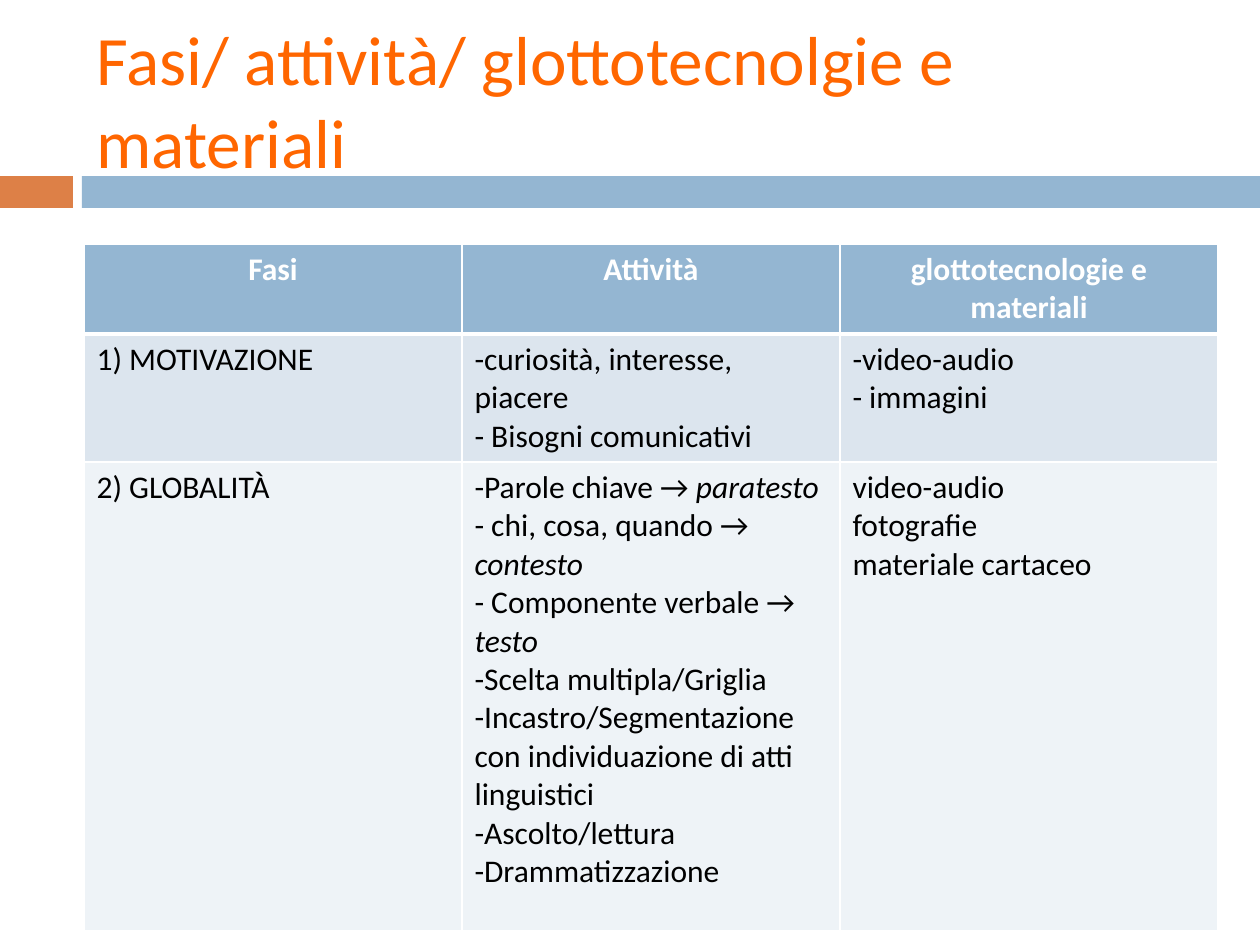
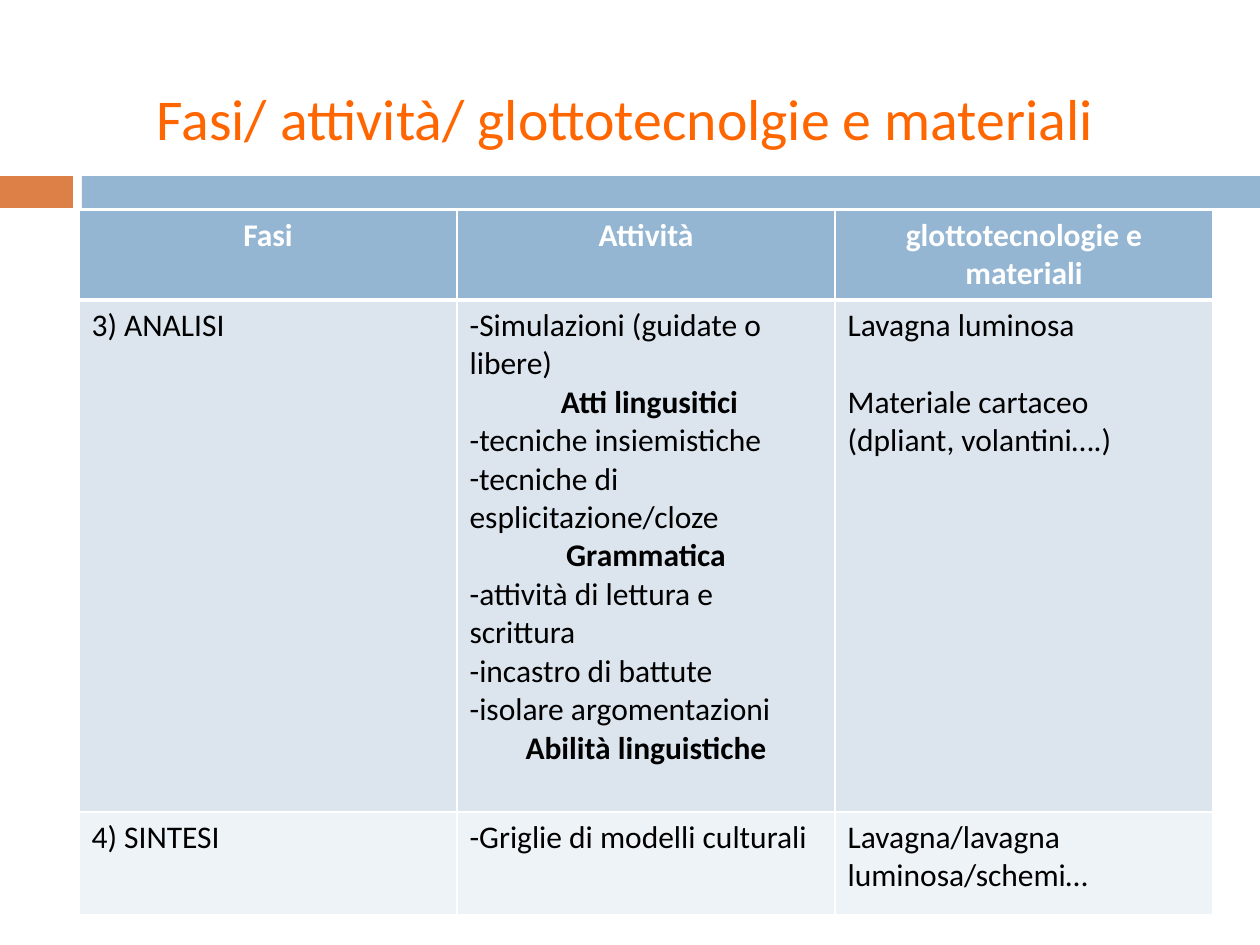
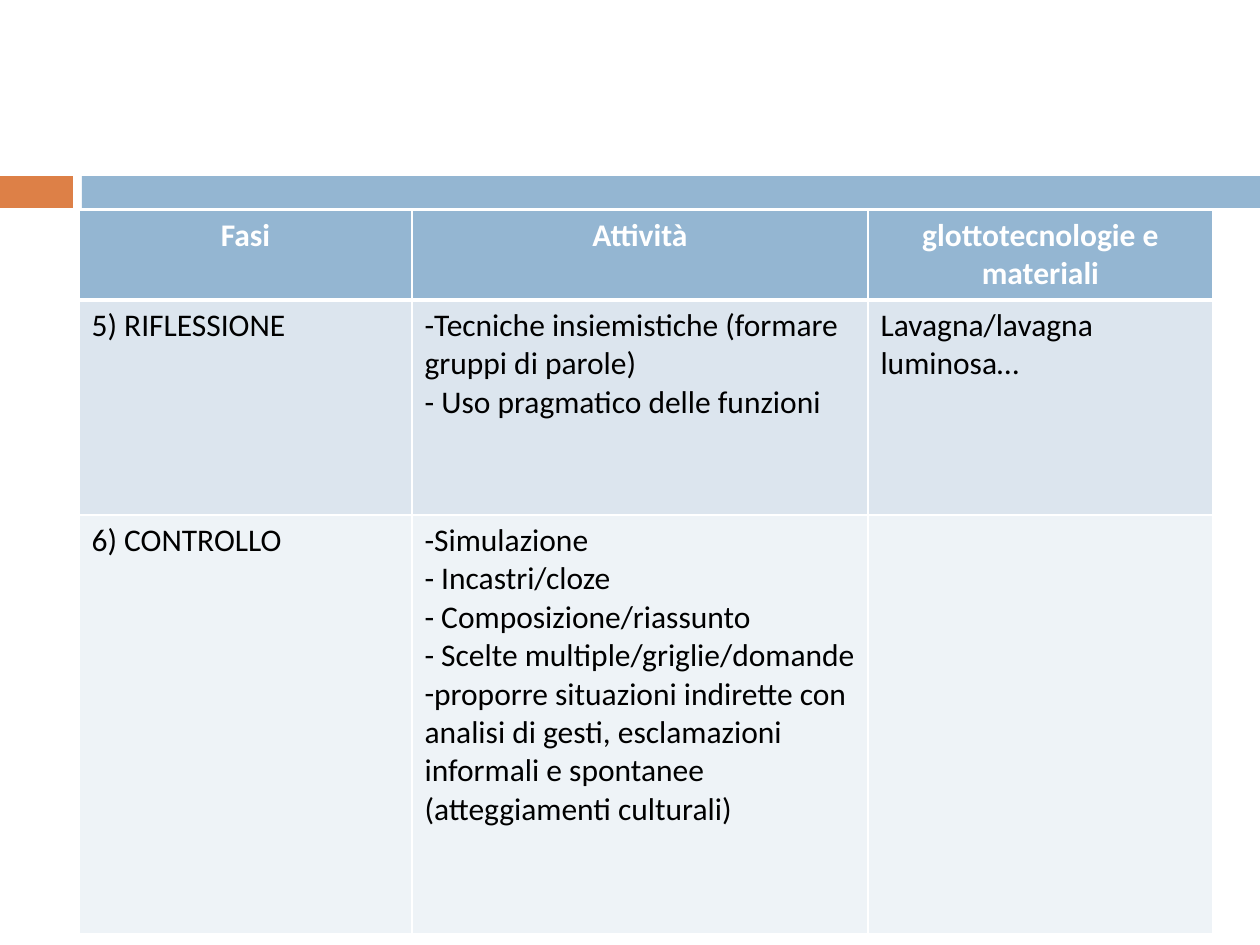
from dataclasses import dataclass
from pptx import Presentation
from pptx.dml.color import RGBColor as Rgb
from pptx.enum.shapes import MSO_SHAPE as Kind
from pptx.enum.text import MSO_ANCHOR as Anchor, PP_ALIGN as Align
from pptx.oxml import parse_xml
from pptx.oxml.ns import nsdecls
from pptx.util import Emu, Pt

SCALE = 914400 / 126


@dataclass(frozen=True)
class Theme:
    font: str = "Calibri"
    title: str = "FF6600"
    accent: str = "DD8047"
    band: str = "94B6D2"
    rows: tuple = ("DCE5EE", "EEF3F7")
    ink: str = "000000"
    white: str = "FFFFFF"
    big: float = 39.6
    mid: float = 33
    body: float = 18
    gap: float = 22
    thin: int = 1
    thick: int = 3


THEME = Theme()
HEADS = ("Fasi", "Attività", "glottotecnologie e materiali")
TITLE = "Fasi/ attività/ glottotecnolgie e materiali"


def px(*nums):
    return [Emu(round(n * SCALE)) for n in nums]


def line(text, slant="", **marks):
    return {"text": text, "slant": slant, **marks}


def dash(text, slant=""):
    return line(text, slant, dash=True)


def head(text):
    return line(text, bold=True, align=Align.CENTER)


def add_run(para, text, color, size, **marks):
    run = para.add_run()
    run.text = text
    run.font.color.rgb = Rgb.from_string(color)
    for name, value in {"name": THEME.font, "size": Pt(size), **marks}.items():
        setattr(run.font, name, value)


def add_dash(para):
    props = para._p.get_or_add_pPr()
    for name in ("marL", "indent"):
        props.set(name, "0")
    for tag, key, value in (("buFont", "typeface", THEME.font), ("buChar", "char", "-")):
        props.append(parse_xml(f'<a:{tag} {nsdecls("a")} {key}="{value}"/>'))


def fill_text(frame, lines, color):
    for num, item in enumerate(lines):
        para = frame.add_paragraph() if num else frame.paragraphs[0]
        para.alignment = item.get("align", Align.LEFT)
        if "before" in item:
            para.space_before = Pt(item["before"])
        if item.get("dash"):
            add_dash(para)
        bold = item.get("bold", False)
        add_run(para, item["text"], color, THEME.body, bold=bold)
        if item["slant"]:
            add_run(para, item["slant"], color, THEME.body, italic=True)


def add_edges(cell, top, base):
    props = cell._tc.get_or_add_tcPr()
    sides = {"L": THEME.thin, "R": THEME.thin, "T": top, "B": base}
    for side, width in sides.items():
        props.append(parse_xml(
            f'<a:ln{side} {nsdecls("a")} w="{Pt(width)}"><a:solidFill>'
            f'<a:srgbClr val="{THEME.white}"/></a:solidFill></a:ln{side}>'))


def add_bands(slide, box):
    left, top, width, height = box
    start = left + 82
    parts = ((left, 73, THEME.accent), (start, width - 82, THEME.band))
    for side, wide, color in parts:
        band = slide.shapes.add_shape(Kind.RECTANGLE, *px(side, top, wide, height))
        band.shadow.inherit = False
        band.fill.solid()
        band.fill.fore_color.rgb = Rgb.from_string(color)
        band.line.fill.background()


def add_title(slide, box, size, anchor, align):
    frame = slide.shapes.add_textbox(*px(*box)).text_frame
    frame.word_wrap = True
    frame.vertical_anchor = anchor
    para = frame.paragraphs[0]
    para.alignment = align
    add_run(para, TITLE, THEME.title, size)


def add_grid(slide, spot, cols, rows, body):
    box = (*spot, sum(cols), sum(rows))
    table = slide.shapes.add_table(len(rows), len(cols), *px(*box)).table
    table.horz_banding = False
    for col, width in zip(table.columns, px(*cols)):
        col.width = width
    for row, height in zip(table.rows, px(*rows)):
        row.height = height
    for r, items in enumerate([[[head(text)] for text in HEADS], *body]):
        top = THEME.thick if r == 1 else THEME.thin
        base = THEME.thin if r else THEME.thick
        shade = THEME.rows[(r - 1) % 2] if r else THEME.band
        for c, lines in enumerate(items):
            cell = table.cell(r, c)
            add_edges(cell, top, base)
            cell.fill.solid()
            cell.fill.fore_color.rgb = Rgb.from_string(shade)
            fill_text(cell.text_frame, lines, THEME.ink if r else THEME.white)


EVEN = (378, 378, 378)
FIRST = [
    [
        [line("1) MOTIVAZIONE")],
        [dash("curiosità, interesse, piacere"), dash(" Bisogni comunicativi")],
        [dash("video-audio"), dash(" immagini")],
    ],
    [
        [line("2) GLOBALITÀ")],
        [
            dash("Parole chiave → ", "paratesto"),
            dash(" chi, cosa, quando → ", "contesto"),
            dash(" Componente verbale → ", "testo"),
            dash("Scelta multipla/Griglia"),
            dash("Incastro/Segmentazione con individuazione di atti linguistici"),
            dash("Ascolto/lettura"),
            dash("Drammatizzazione"),
        ],
        [line("video-audio"), line("fotografie"), line("materiale cartaceo")],
    ],
]
NEXT = [
    [
        [line("3) ANALISI")],
        [
            line("-Simulazioni (guidate o libere)"),
            head(" Atti lingusitici"),
            line("-tecniche insiemistiche"),
            dash("tecniche di esplicitazione/cloze"),
            head("Grammatica"),
            line("-attività di lettura e scrittura"),
            line("-incastro di battute"),
            line("-isolare argomentazioni"),
            head("Abilità linguistiche"),
        ],
        [
            line("Lavagna luminosa"),
            line("Materiale cartaceo (dpliant, volantini….)", before=THEME.gap),
        ],
    ],
    [
        [line("4) SINTESI")],
        [dash("Griglie di modelli culturali")],
        [line("Lavagna/lavagna luminosa/schemi…")],
    ],
]
LAST = [
    [
        [line("5) RIFLESSIONE")],
        [
            line("-Tecniche insiemistiche (formare gruppi di parole)"),
            line("- Uso pragmatico delle funzioni"),
        ],
        [line("Lavagna/lavagna luminosa…")],
    ],
    [
        [line("6) CONTROLLO")],
        [
            dash("Simulazione"),
            dash(" Incastri/cloze"),
            dash(" Composizione/riassunto"),
            dash(" Scelte multiple/griglie/domande"),
            dash("proporre situazioni indirette con analisi di gesti, "
                 "esclamazioni informali e spontanee (atteggiamenti culturali)"),
        ],
        [],
    ],
]
SLIDES = (
    (((84, 31, 1124, 136), THEME.big, Anchor.MIDDLE, Align.LEFT),
     ((84, 244), EVEN, (90, 128, 469), FIRST)),
    (((37, 53, 1176, 105), THEME.mid, Anchor.BOTTOM, Align.CENTER),
     ((79, 210), EVEN, (90, 512, 103), NEXT)),
    (None, ((79, 210), (333, 456, 345), (90, 215, 419), LAST)),
)


def main():
    deck = Presentation()
    deck.slide_width, deck.slide_height = px(1260, 945)
    for title, grid in SLIDES:
        slide = deck.slides.add_slide(deck.slide_layouts[6])
        add_bands(slide, (0, 176, 1260, 32))
        if title:
            add_title(slide, *title)
        add_grid(slide, *grid)
    deck.save("out.pptx")


if __name__ == "__main__":
    main()
